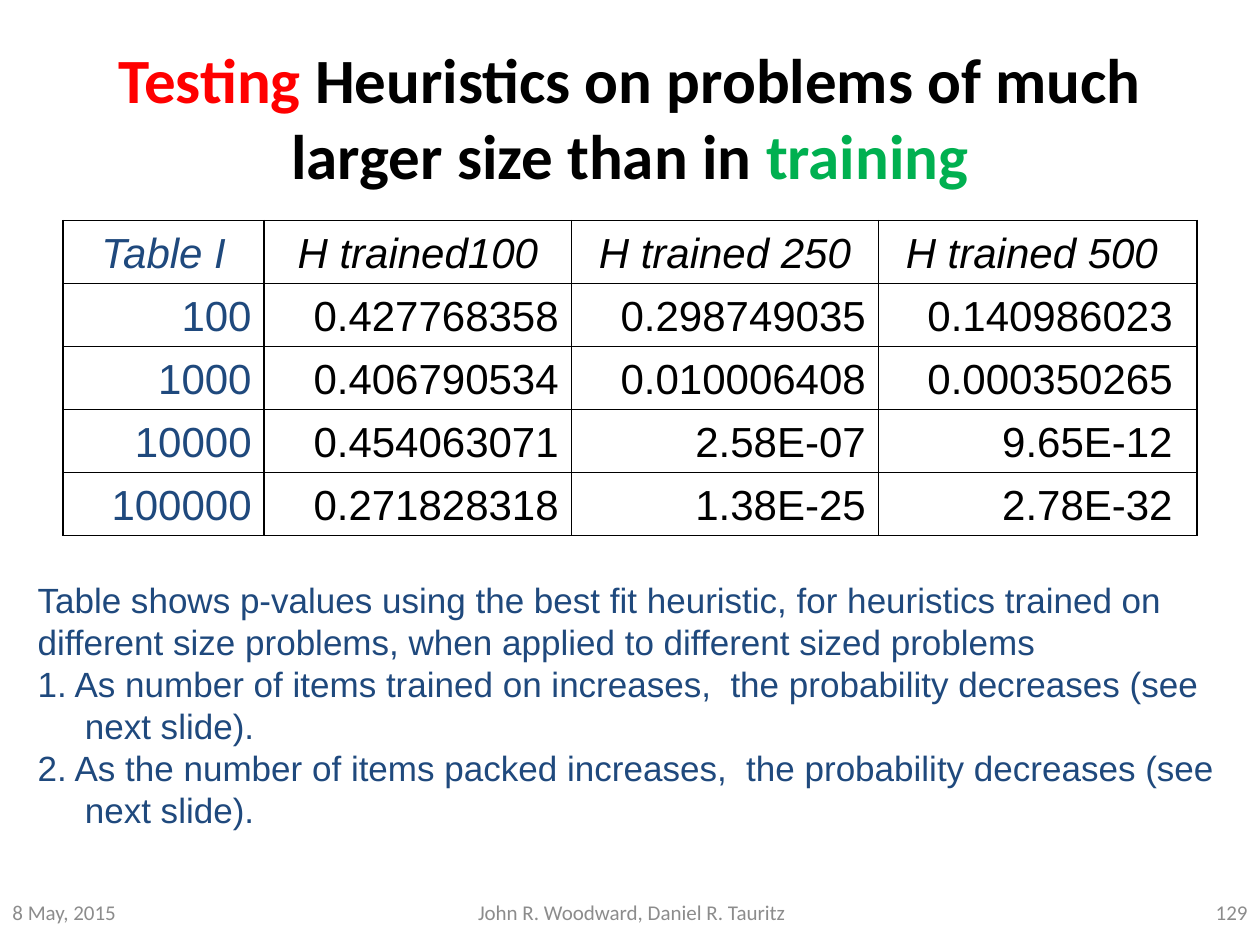
from dataclasses import dataclass

from lxml import etree
from pptx import Presentation
from pptx.dml.color import RGBColor
from pptx.enum.text import MSO_ANCHOR, PP_ALIGN
from pptx.oxml.ns import qn
from pptx.util import Pt

LEFT, CENTER, RIGHT = PP_ALIGN.LEFT, PP_ALIGN.CENTER, PP_ALIGN.RIGHT
TOP, MIDDLE, BOTTOM = MSO_ANCHOR.TOP, MSO_ANCHOR.MIDDLE, MSO_ANCHOR.BOTTOM
BLANK_LAYOUT = 6


@dataclass(frozen=True)
class Theme:
    heading_font: str = "Calibri"
    body_font: str = "Arial"
    black: str = "000000"
    navy: str = "1F497D"
    red: str = "FF0000"
    green: str = "00B050"
    grey: str = "8C8C8C"
    title_size: int = 36
    table_size: int = 24
    body_size: int = 20
    footer_size: int = 12
    hanging: int = 27
    border: int = 1


THEME = Theme()

TITLE = [
    ("Testing", THEME.red),
    (" Heuristics on problems of much larger size than in ", THEME.black),
    ("training", THEME.green),
]
P_VALUES = [
    ["Table I", "H trained100", "H trained 250", "H trained 500 "],
    ["100", "0.427768358", "0.298749035", "0.140986023 "],
    ["1000", "0.406790534", "0.010006408", "0.000350265 "],
    ["10000", "0.454063071", "2.58E-07", "9.65E-12 "],
    ["100000", "0.271828318", "1.38E-25", "2.78E-32 "],
]
COLUMN_WIDTHS = [115, 175.5, 175.5, 182]
ROW_HEIGHTS = [36, 33.5, 35, 33.5, 34]
NOTES = [
    "Table shows p-values using the best fit heuristic, for heuristics trained on",
    "different size problems, when applied to different sized problems",
    "1. As number of items trained on increases,  the probability decreases (see next slide).",
    "2. As the number of items packed increases,  the probability decreases (see next slide).",
]
FOOTERS = [
    ("8 May, 2015", 0, 168, LEFT),
    ("John R. Woodward, Daniel R. Tauritz", 247, 228, CENTER),
    ("129", 552, 168, RIGHT),
]


def style_span(span, font, size, color, bold=False, italic=False):
    span.font.name = font
    span.font.size = Pt(size)
    span.font.color.rgb = RGBColor.from_string(color)
    span.font.bold = bold
    span.font.italic = italic


def hang_indent(para):
    properties = para._p.get_or_add_pPr()
    properties.set("marL", str(Pt(THEME.hanging)))
    properties.set("indent", str(-Pt(THEME.hanging)))


def add_text_box(page, left, top, width, height, anchor):
    box = page.shapes.add_textbox(Pt(left), Pt(top), Pt(width), Pt(height))
    frame = box.text_frame
    frame.word_wrap = True
    frame.vertical_anchor = anchor
    return frame


def add_title(page):
    para = add_text_box(page, 36, 21.6, 648, 90, MIDDLE).paragraphs[0]
    para.alignment = CENTER
    for text, color in TITLE:
        span = para.add_run()
        span.text = text
        style_span(span, THEME.heading_font, THEME.title_size, color, bold=True)


def set_borders(cell):
    properties = cell._tc.get_or_add_tcPr()
    for position, side in enumerate(("lnL", "lnR", "lnT", "lnB")):
        line = etree.Element(qn(f"a:{side}"), w=str(Pt(THEME.border)))
        fill = etree.SubElement(line, qn("a:solidFill"))
        etree.SubElement(fill, qn("a:srgbClr"), val=THEME.black)
        properties.insert(position, line)


def fill_cell(cell, text, is_header, is_label):
    cell.fill.background()
    cell.vertical_anchor = BOTTOM
    set_borders(cell)
    cell.text_frame.text = text
    para = cell.text_frame.paragraphs[0]
    para.alignment = CENTER if is_header else RIGHT
    hang_indent(para)
    color = THEME.navy if is_label else THEME.black
    style_span(para.runs[0], THEME.body_font, THEME.table_size, color, italic=is_header)


def add_p_value_table(page):
    table = page.shapes.add_table(
        len(P_VALUES), len(COLUMN_WIDTHS),
        Pt(36), Pt(126), Pt(sum(COLUMN_WIDTHS)), Pt(sum(ROW_HEIGHTS)),
    ).table
    table.first_row = False
    table.horz_banding = False
    for column, width in zip(table.columns, COLUMN_WIDTHS):
        column.width = Pt(width)
    for row, height in zip(table.rows, ROW_HEIGHTS):
        row.height = Pt(height)
    for row_index, values in enumerate(P_VALUES):
        for column_index, text in enumerate(values):
            cell = table.cell(row_index, column_index)
            fill_cell(cell, text, row_index == 0, column_index == 0)


def add_notes(page):
    frame = add_text_box(page, 14.4, 327, 701, 152.6, TOP)
    frame.text = "\n".join(NOTES)
    for para in frame.paragraphs:
        hang_indent(para)
        style_span(para.runs[0], THEME.body_font, THEME.body_size, THEME.navy)


def add_footer(page, text, left, width, alignment):
    frame = add_text_box(page, left, 502.5, width, 37.5, MIDDLE)
    frame.text = text
    para = frame.paragraphs[0]
    para.alignment = alignment
    style_span(para.runs[0], THEME.heading_font, THEME.footer_size, THEME.grey)


def main():
    deck = Presentation()
    deck.slide_width, deck.slide_height = Pt(720), Pt(540)
    page = deck.slides.add_slide(deck.slide_layouts[BLANK_LAYOUT])
    add_title(page)
    add_p_value_table(page)
    add_notes(page)
    for footer in FOOTERS:
        add_footer(page, *footer)
    deck.save("out.pptx")


if __name__ == "__main__":
    main()
